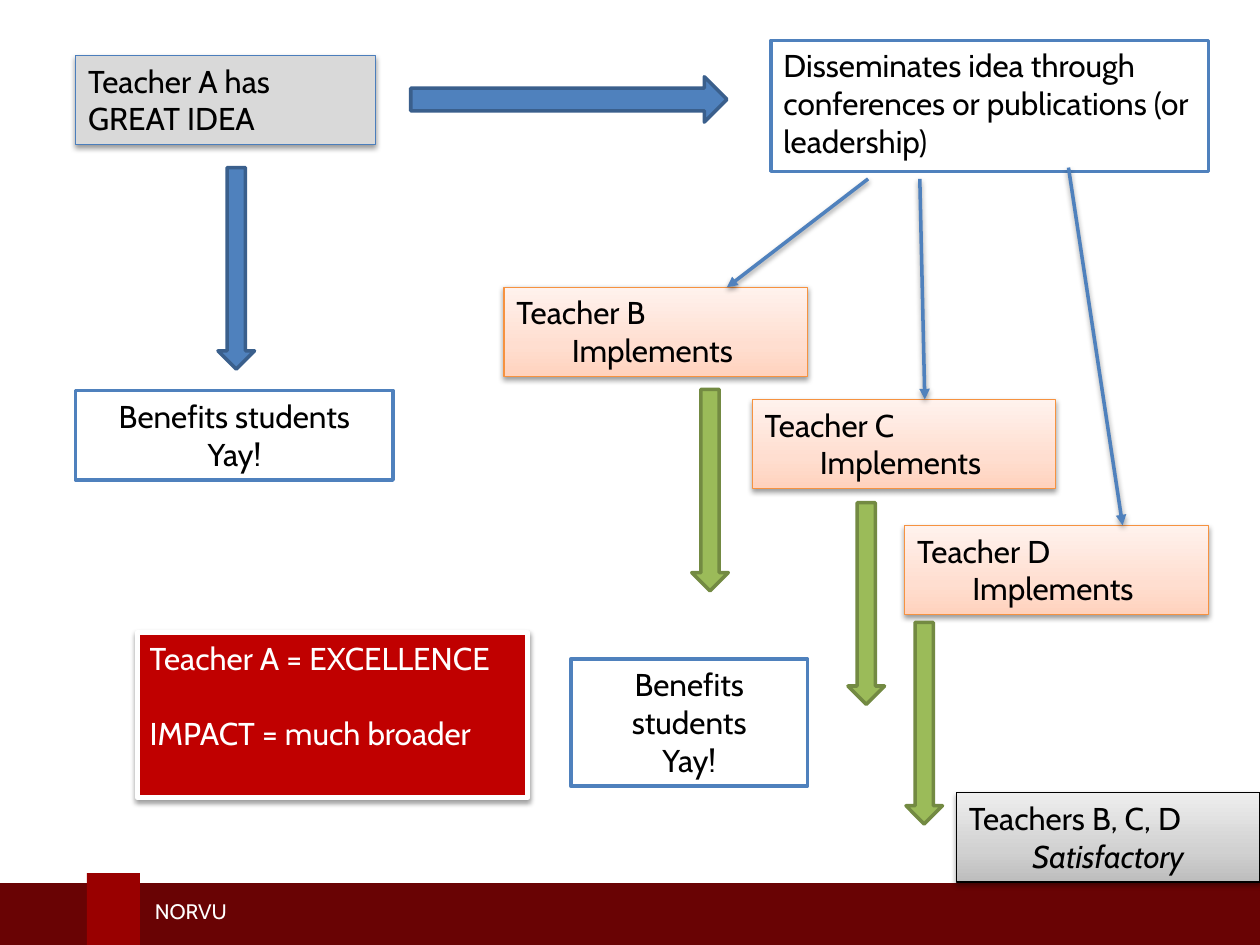
from dataclasses import dataclass

from lxml.etree import SubElement
from pptx import Presentation
from pptx.dml.color import RGBColor
from pptx.enum.shapes import MSO_CONNECTOR, MSO_SHAPE
from pptx.enum.text import MSO_ANCHOR, PP_ALIGN
from pptx.oxml.ns import qn
from pptx.util import Inches, Pt

COLS, ROWS = 100, 75
WIDTH, HEIGHT = Inches(10), Inches(7.5)


@dataclass(frozen=True)
class Style:
    fill: str | tuple
    line: str | None = None
    weight: float = 0
    ink: str = "000000"
    shadow: bool = False


@dataclass(frozen=True)
class Theme:
    font: str = "Cabin"
    body: int = 18
    small: int = 12
    line_gap: float = 21.6
    link: str = "4F81BD"
    link_weight: float = 2
    band: Style = Style("690304")
    tab: Style = Style("990000")
    footer_ink: str = "FFFFFF"
    idea: Style = Style("D9D9D9", "4B7EBC", 0.75, shadow=True)
    outcome: Style = Style("FFFFFF", "4F81BD", 2)
    adopter: Style = Style(("FFD2BD", "FFDED0", "FFF2ED"), "F69240", 0.75, shadow=True)
    satisfactory: Style = Style(("BDBDBD", "D1D1D1", "EEEEEE"), "000000", 0.75, shadow=True)
    excellence: Style = Style("C00000", "FFFFFF", 3, "FFFFFF", True)
    blue_arrow: Style = Style("4F81BD", "3A5F8C", 2)
    green_arrow: Style = Style("9BBB59", "738A42", 2)


THEME = Theme()


@dataclass(frozen=True)
class Box:
    col: float
    row: float
    cols: float
    rows: float

    def inner(self, col, row, cols, rows):
        return Box(self.col + col, self.row + row, cols, rows)

    def emu(self):
        return (x_at(self.col), y_at(self.row), x_at(self.cols), y_at(self.rows))


def x_at(col):
    return round(WIDTH * col / COLS)


def y_at(row):
    return round(HEIGHT * row / ROWS)


def cast_shadow(properties):
    effects = SubElement(properties, qn("a:effectLst"))
    shade = SubElement(effects, qn("a:outerShdw"), blurRad=str(Pt(3.1)),
                       dist=str(Pt(1.6)), dir="5400000", rotWithShape="0")
    black = SubElement(shade, qn("a:srgbClr"), val="000000")
    SubElement(black, qn("a:alpha"), val="38000")


def paint_gradient(properties, colors):
    gradient = SubElement(properties, qn("a:gradFill"), rotWithShape="1")
    stops = SubElement(gradient, qn("a:gsLst"))
    for position, color in zip((0, 35, 100), colors):
        stop = SubElement(stops, qn("a:gs"), pos=str(position * 1000))
        SubElement(stop, qn("a:srgbClr"), val=color)
    SubElement(gradient, qn("a:lin"), ang="16200000", scaled="0")


def add_block(slide, box, style, preset=MSO_SHAPE.RECTANGLE):
    block = slide.shapes.add_shape(preset, *box.emu())
    if isinstance(style.fill, tuple):
        paint_gradient(block._element.spPr, style.fill)
    else:
        block.fill.solid()
        block.fill.fore_color.rgb = RGBColor.from_string(style.fill)
    if style.line:
        block.line.color.rgb = RGBColor.from_string(style.line)
        block.line.width = Pt(style.weight)
    else:
        block.line.fill.background()
    if style.shadow:
        cast_shadow(block._element.spPr)
    else:
        block.shadow.inherit = False
    return block


def write(frame, lines, ink, size=THEME.body, aligns=(PP_ALIGN.LEFT,),
          italics=(), gap=0, anchor=MSO_ANCHOR.TOP):
    frame.word_wrap = True
    frame.vertical_anchor = anchor
    for index, line in enumerate(lines):
        paragraph = frame.paragraphs[0] if index == 0 else frame.add_paragraph()
        paragraph.alignment = aligns[index % len(aligns)]
        paragraph.space_before = Pt(gap if index else 0)
        run = paragraph.add_run()
        run.text = line
        run.font.name = THEME.font
        run.font.size = Pt(size)
        run.font.color.rgb = RGBColor.from_string(ink)
        if index in italics:
            run.font.italic = True


def add_card(slide, box, style, lines, **layout):
    card = add_block(slide, box, style)
    write(card.text_frame, lines, style.ink, **layout)


def add_outcome(slide, box):
    add_card(slide, box, THEME.outcome, ("Benefits students", "Yay!"),
             aligns=(PP_ALIGN.CENTER,))


def add_link(slide, start, end):
    link = slide.shapes.add_connector(MSO_CONNECTOR.STRAIGHT, x_at(start[0]), y_at(start[1]),
                                      x_at(end[0]), y_at(end[1]))
    link.line.color.rgb = RGBColor.from_string(THEME.link)
    link.line.width = Pt(THEME.link_weight)
    SubElement(link._element.spPr.find(qn("a:ln")), qn("a:tailEnd"), type="triangle")
    cast_shadow(link._element.spPr)


def add_footer(slide, box):
    add_block(slide, box.inner(0, 0.8, box.cols, 4.9), THEME.band)
    add_block(slide, box.inner(6.9, 0, 4.2, 5.7), THEME.tab)
    label = slide.shapes.add_textbox(*box.inner(11.3, 1.5, 39.5, 3).emu())
    write(label.text_frame, ("NORVU",), THEME.footer_ink, THEME.small,
          anchor=MSO_ANCHOR.MIDDLE)


def add_classroom(slide, box):
    add_card(slide, box.inner(0, 0, 23.8, 7.1), THEME.idea, ("Teacher A has GREAT IDEA",))
    add_block(slide, box.inner(11.3, 8.9, 2.9, 16), THEME.blue_arrow, MSO_SHAPE.DOWN_ARROW)
    add_outcome(slide, box.inner(0, 26.6, box.cols, 7.1))


def add_dissemination(slide, box):
    add_block(slide, box.inner(0, 2.9, 25.1, 3.6), THEME.blue_arrow, MSO_SHAPE.RIGHT_ARROW)
    add_card(slide, box.inner(28.6, 0, 34.7, box.rows), THEME.outcome,
             ("Disseminates idea through conferences or publications (or leadership)",))


def add_adopter(slide, box, name, arrow_col, arrow_row, link_start, link_col):
    add_card(slide, box, THEME.adopter, (name, "Implements "),
             aligns=(PP_ALIGN.LEFT, PP_ALIGN.CENTER))
    add_block(slide, box.inner(arrow_col, arrow_row, 2.9, 16), THEME.green_arrow,
              MSO_SHAPE.DOWN_ARROW)
    add_link(slide, link_start, (box.col + link_col, box.row))


def add_verdicts(slide, box):
    add_card(slide, box.inner(0, 0, 31, 13.1), THEME.excellence,
             ("Teacher A = EXCELLENCE", "IMPACT = much broader"), gap=THEME.line_gap)
    add_outcome(slide, box.inner(34.4, 2.1, 18.8, 10.1))
    add_card(slide, box.inner(65, 12.7, 24.1, 7.1), THEME.satisfactory,
             ("Teachers B, C, D", "Satisfactory"),
             aligns=(PP_ALIGN.LEFT, PP_ALIGN.CENTER), italics=(1,))


def main():
    deck = Presentation()
    deck.slide_width, deck.slide_height = WIDTH, HEIGHT
    slide = deck.slides.add_slide(deck.slide_layouts[6])
    add_footer(slide, Box(0, 69.3, COLS, 5.7))
    add_classroom(slide, Box(6, 4.4, 25.2, 33.7))
    add_dissemination(slide, Box(32.6, 3.2, 63.3, 10.4))
    adopters = (
        ("Teacher B", 40, 22.8, 14.9, 8.1, (68.9, 14.2), 17.7),
        ("Teacher C", 59.7, 31.7, 7.6, 8.2, (73, 14.2), 13.7),
        ("Teacher D", 71.8, 41.7, 0.1, 7.7, (84.8, 13.3), 17.3),
    )
    for name, col, row, *flow in adopters:
        add_adopter(slide, Box(col, row, 24.1, 7.1), name, *flow)
    add_verdicts(slide, Box(10.9, 50.2, 89.1, 19.8))
    deck.save("out.pptx")


if __name__ == "__main__":
    main()
